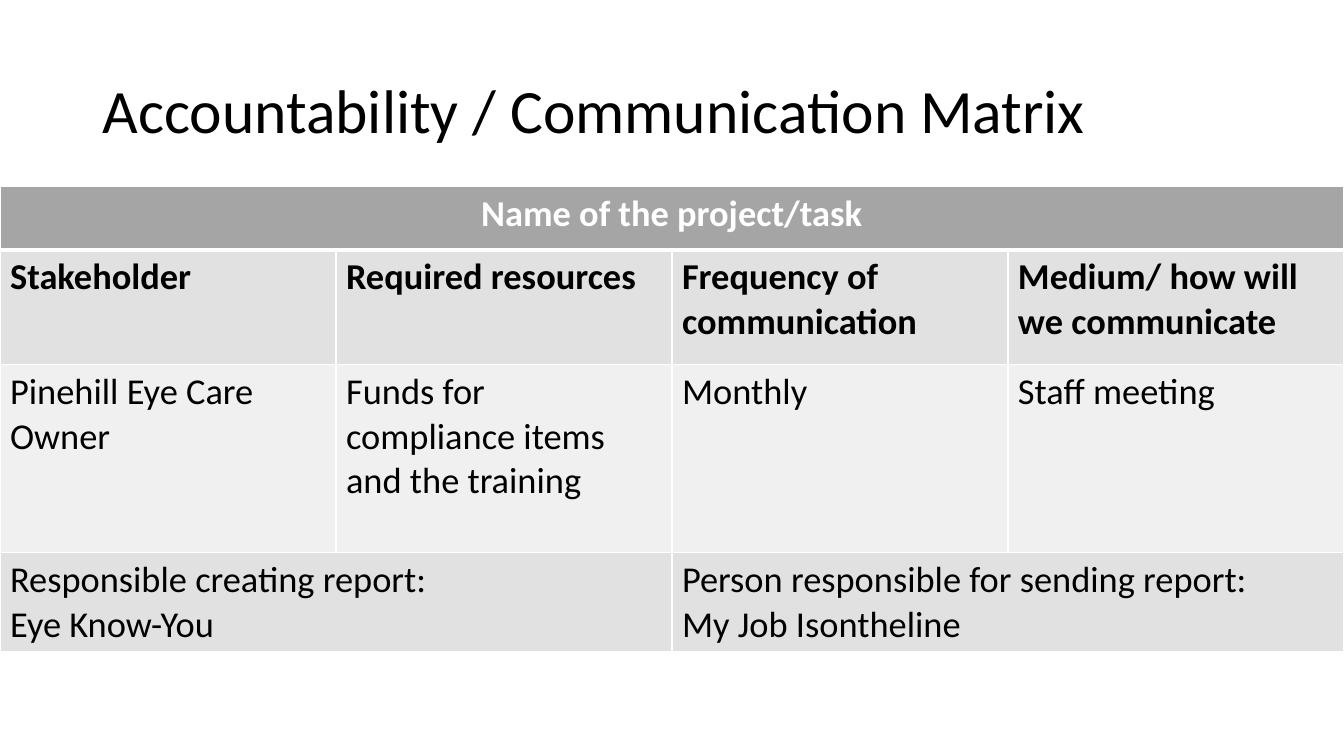
from lxml import etree
from pptx import Presentation
from pptx.dml.color import RGBColor
from pptx.enum.text import MSO_ANCHOR, MSO_AUTO_SIZE, PP_ALIGN
from pptx.oxml.ns import qn
from pptx.util import Pt

LEFT, CENTER = PP_ALIGN.LEFT, PP_ALIGN.CENTER
MIDDLE = MSO_ANCHOR.MIDDLE
NO_AUTOSIZE = MSO_AUTO_SIZE.NONE

BLACK = RGBColor(0x00, 0x00, 0x00)
WHITE = RGBColor(0xFF, 0xFF, 0xFF)
HEADER_GRAY = RGBColor(0xA5, 0xA5, 0xA5)
BAND_DARK = RGBColor(0xE1, 0xE1, 0xE1)
BAND_LIGHT = RGBColor(0xF0, 0xF0, 0xF0)

ROWS = [
    ["Name of the project/task"],
    ["Stakeholder", "Required resources", "Frequency of communication",
     "Medium/ how will we communicate"],
    ["Pinehill Eye Care\nOwner", "Funds for compliance items and the training",
     "Monthly", "Staff meeting"],
    ["Responsible creating report:\nEye Know-You",
     "Person responsible for sending report:\nMy Job Isontheline"],
]
ROW_HEIGHTS = [45.36, 82, 134.4, 70]
ROW_FILLS = [HEADER_GRAY, BAND_DARK, BAND_LIGHT, BAND_DARK]
COLUMNS = 4


class SlideBuilder:
    font = "Calibri"
    title_size = 44
    table_size = 26

    def __init__(self, prs):
        self.width = prs.slide_width
        self.s = prs.slides.add_slide(prs.slide_layouts[5])

    def style(self, p, size, color, bold=False, align=LEFT):
        p.alignment = align
        p.font.name = self.font
        p.font.size = Pt(size)
        p.font.bold = bold
        p.font.color.rgb = color

    def title(self, text, left, top, width, height):
        sp = self.s.shapes.title
        sp.left, sp.top, sp.width, sp.height = map(Pt, (left, top, width, height))
        tf = sp.text_frame
        tf.text = text
        tf.word_wrap = True
        tf.auto_size = NO_AUTOSIZE
        tf.vertical_anchor = MIDDLE
        p = tf.paragraphs[0]
        p.line_spacing = 0.9
        self.style(p, self.title_size, BLACK)

    def borders(self, cell, top, bottom):
        tcPr = cell._tc.get_or_add_tcPr()
        for side, width in (("L", 1), ("R", 1), ("T", top), ("B", bottom)):
            ln = etree.SubElement(tcPr, qn(f"a:ln{side}"), w=str(Pt(width)))
            fill = etree.SubElement(ln, qn("a:solidFill"))
            etree.SubElement(fill, qn("a:srgbClr"), val=str(WHITE))

    def table(self, top):
        table = self.s.shapes.add_table(
            len(ROWS), COLUMNS, 0, Pt(top), self.width, Pt(sum(ROW_HEIGHTS))).table
        for r, texts in enumerate(ROWS):
            table.rows[r].height = Pt(ROW_HEIGHTS[r])
            for c in range(COLUMNS):
                cell = table.cell(r, c)
                self.borders(cell, 3 if r == 1 else 1, 3 if r == 0 else 1)
                cell.fill.solid()
                cell.fill.fore_color.rgb = ROW_FILLS[r]
            span = COLUMNS // len(texts)
            for i, text in enumerate(texts):
                cell = table.cell(r, i * span)
                if span > 1:
                    cell.merge(table.cell(r, (i + 1) * span - 1))
                cell.text = text
                for p in cell.text_frame.paragraphs:
                    self.style(p, self.table_size, WHITE if r == 0 else BLACK,
                               r < 2, CENTER if r == 0 else LEFT)


def main():
    prs = Presentation()
    prs.slide_width, prs.slide_height = Pt(960), Pt(540)
    slide = SlideBuilder(prs)
    slide.title("Accountability / Communication Matrix", 66, 28.75, 828, 104.4)
    slide.table(133.2)
    prs.save("out.pptx")


if __name__ == "__main__":
    main()
